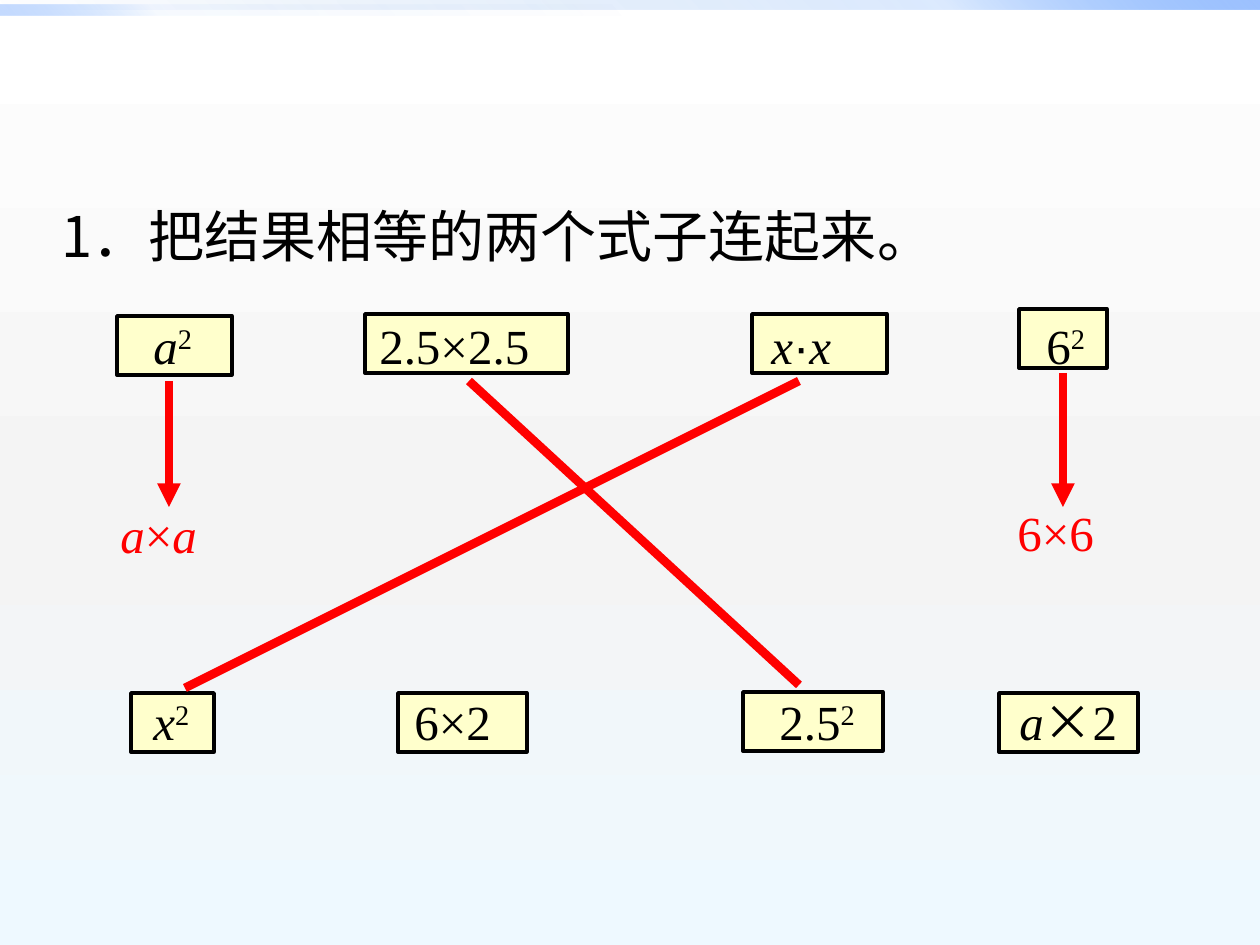
"""Build the exercise slide that matches expressions with equal results."""
from dataclasses import dataclass

from lxml.etree import SubElement
from pptx import Presentation
from pptx.dml.color import RGBColor
from pptx.enum.shapes import MSO_CONNECTOR, MSO_SHAPE
from pptx.enum.text import MSO_ANCHOR, MSO_AUTO_SIZE, PP_ALIGN
from pptx.oxml.ns import qn
from pptx.slide import Slide
from pptx.text.text import _Run as Run
from pptx.util import Pt

EMU_PER_PX = 9144000 / 1260
SLIDE_WIDTH, SLIDE_HEIGHT = 1260, 945
BOX_HEIGHT, LABEL_HEIGHT = 59, 72
TOP_LABELS, BOTTOM_LABELS = 309, 685

BLACK = RGBColor(0x00, 0x00, 0x00)
WHITE = RGBColor(0xFF, 0xFF, 0xFF)
RED = RGBColor(0xFF, 0x00, 0x00)
CREAM = RGBColor(0xFF, 0xFF, 0xCC)
LIGHT_GREY = RGBColor(0xF4, 0xF4, 0xF4)
PALE_BLUE = RGBColor(0xEE, 0xF9, 0xFF)
DARK_BLUE = RGBColor(0x00, 0x58, 0xB7)
MID_BLUE = RGBColor(0x4F, 0x95, 0xFF)
SKY_BLUE = RGBColor(0x9E, 0xC2, 0xFF)

SERIF, SANS, CHINESE = "Times New Roman", "Arial", "Noto Sans CJK SC"


@dataclass(frozen=True)
class Stop:
    position: int
    color: RGBColor
    opacity: int = 100


@dataclass(frozen=True)
class Band:
    top: int
    width: int
    angle: int
    stops: tuple[Stop, ...]


@dataclass(frozen=True)
class Span:
    text: str
    italic: bool = False
    raised: bool = False
    font: str = SERIF


@dataclass(frozen=True)
class Label:
    left: int
    top: int
    width: int
    spans: tuple[Span, ...]
    color: RGBColor = BLACK


@dataclass(frozen=True)
class Box:
    left: int
    top: int
    width: int


@dataclass(frozen=True)
class Line:
    start: tuple[int, int]
    end: tuple[int, int]
    weight: float
    arrow: bool = False


A, X = Span("a", italic=True), Span("x", italic=True)
SQUARED = Span("2", raised=True)

BANDS = (
    Band(0, 1260, 315, (Stop(0, DARK_BLUE, 0), Stop(75, MID_BLUE, 20), Stop(100, SKY_BLUE))),
    Band(5, 630, 135, (Stop(0, DARK_BLUE, 0), Stop(75, MID_BLUE, 5), Stop(100, SKY_BLUE, 60))),
)
BACKGROUND = (Stop(0, WHITE), Stop(55, LIGHT_GREY), Stop(100, PALE_BLUE))

BOXES = (
    Box(117, 316, 115), Box(365, 314, 203), Box(752, 314, 135), Box(1019, 309, 88),
    Box(131, 693, 83), Box(398, 693, 129), Box(743, 692, 140), Box(999, 693, 139),
)
LABELS = (
    Label(141, TOP_LABELS, 72, (A, SQUARED)),
    Label(367, TOP_LABELS, 203, (Span("2.5×2.5"),)),
    Label(759, TOP_LABELS, 121, (X, Span("·", font=SANS), X)),
    Label(1034, TOP_LABELS, 82, (Span("6"), SQUARED)),
    Label(141, BOTTOM_LABELS, 129, (X, SQUARED)),
    Label(402, BOTTOM_LABELS, 129, (Span("6×2"),)),
    Label(767, BOTTOM_LABELS, 112, (Span("2.5"), SQUARED)),
    Label(1007, BOTTOM_LABELS, 139, (A, Span("×", font=CHINESE), Span("2"))),
    Label(108, 498, 140, (A, Span("×"), A), RED),
    Label(1005, 496, 126, (Span("6×6"),), RED),
)
LINES = (
    Line((469, 381), (799, 685), 5),
    Line((799, 381), (185, 688), 5),
    Line((169, 381), (169, 507), 4.5, arrow=True),
    Line((1063, 373), (1063, 507), 4.5, arrow=True),
)


def px(*lengths: int) -> list[int]:
    """Turn pixel lengths into EMU."""
    return [round(length * EMU_PER_PX) for length in lengths]


def set_gradient(parent, stops: tuple[Stop, ...], angle: int) -> None:
    """Replace the stops and angle of the gradient inside an element."""
    gradient = parent.find(".//" + qn("a:gradFill"))
    for child in list(gradient):
        gradient.remove(child)
    stop_list = SubElement(gradient, qn("a:gsLst"))
    for stop in stops:
        entry = SubElement(stop_list, qn("a:gs"), pos=str(stop.position * 1000))
        color = SubElement(entry, qn("a:srgbClr"), val=str(stop.color))
        if stop.opacity < 100:
            SubElement(color, qn("a:alpha"), val=str(stop.opacity * 1000))
    SubElement(gradient, qn("a:lin"), ang=str(angle * 60000), scaled="0")


def format_run(run: Run, font: str, size: int, color: RGBColor) -> None:
    """Set the typeface for every script, the size and the colour."""
    run.font.name = font
    run.font.size = Pt(size)
    run.font.color.rgb = color
    SubElement(run.font._element, qn("a:ea"), typeface=font)


def draw_band(slide: Slide, band: Band) -> None:
    """Draw a translucent gradient strip at the top."""
    shape = slide.shapes.add_shape(MSO_SHAPE.RECTANGLE, *px(0, band.top, band.width, 10))
    shape.shadow.inherit = False
    shape.fill.gradient()
    set_gradient(shape.element, band.stops, band.angle)
    shape.line.fill.background()


def draw_box(slide: Slide, box: Box) -> None:
    """Draw the frame of an expression."""
    shape = slide.shapes.add_shape(
        MSO_SHAPE.RECTANGLE, *px(box.left, box.top, box.width, BOX_HEIGHT))
    shape.shadow.inherit = False
    shape.fill.solid()
    shape.fill.fore_color.rgb = CREAM
    shape.line.color.rgb = BLACK
    shape.line.width = Pt(2)


def draw_label(slide: Slide, label: Label) -> None:
    """Write an expression made of formatted spans."""
    shape = slide.shapes.add_textbox(*px(label.left, label.top, label.width, LABEL_HEIGHT))
    text_frame = shape.text_frame
    text_frame.word_wrap = True
    text_frame.auto_size = MSO_AUTO_SIZE.SHAPE_TO_FIT_TEXT
    for span in label.spans:
        run = text_frame.paragraphs[0].add_run()
        run.text = span.text
        format_run(run, span.font, 28, label.color)
        run.font.italic = span.italic
        if span.raised:
            run.font._element.set("baseline", "30000")


def draw_line(slide: Slide, line: Line) -> None:
    """Draw a red match line, with an arrowhead if asked."""
    connector = slide.shapes.add_connector(
        MSO_CONNECTOR.STRAIGHT, *px(*line.start, *line.end))
    connector.line.color.rgb = RED
    connector.line.width = Pt(line.weight)
    properties = connector.element.spPr
    if line.arrow:
        SubElement(properties.find(qn("a:ln")), qn("a:tailEnd"), type="triangle")
    SubElement(properties, qn("a:effectLst"))


def write_title(slide: Slide) -> None:
    """Place the question in the title placeholder."""
    title = slide.shapes.title
    title.left, title.top, title.width, title.height = px(49, 195, 893, 79)
    text_frame = title.text_frame
    text_frame.text = "1．把结果相等的两个式子连起来。"
    text_frame.word_wrap = False
    text_frame.auto_size = MSO_AUTO_SIZE.SHAPE_TO_FIT_TEXT
    text_frame.vertical_anchor = MSO_ANCHOR.TOP
    paragraph = text_frame.paragraphs[0]
    paragraph.alignment = PP_ALIGN.LEFT
    format_run(paragraph.runs[0], CHINESE, 32, BLACK)


def main() -> None:
    """Build and save the presentation."""
    presentation = Presentation()
    presentation.slide_width, presentation.slide_height = px(SLIDE_WIDTH, SLIDE_HEIGHT)
    slide = presentation.slides.add_slide(presentation.slide_layouts[5])
    slide.background.fill.gradient()
    set_gradient(slide.element, BACKGROUND, 90)
    write_title(slide)
    for draw, items in ((draw_band, BANDS), (draw_box, BOXES),
                        (draw_label, LABELS), (draw_line, LINES)):
        for item in items:
            draw(slide, item)
    presentation.save("out.pptx")


if __name__ == "__main__":
    main()
